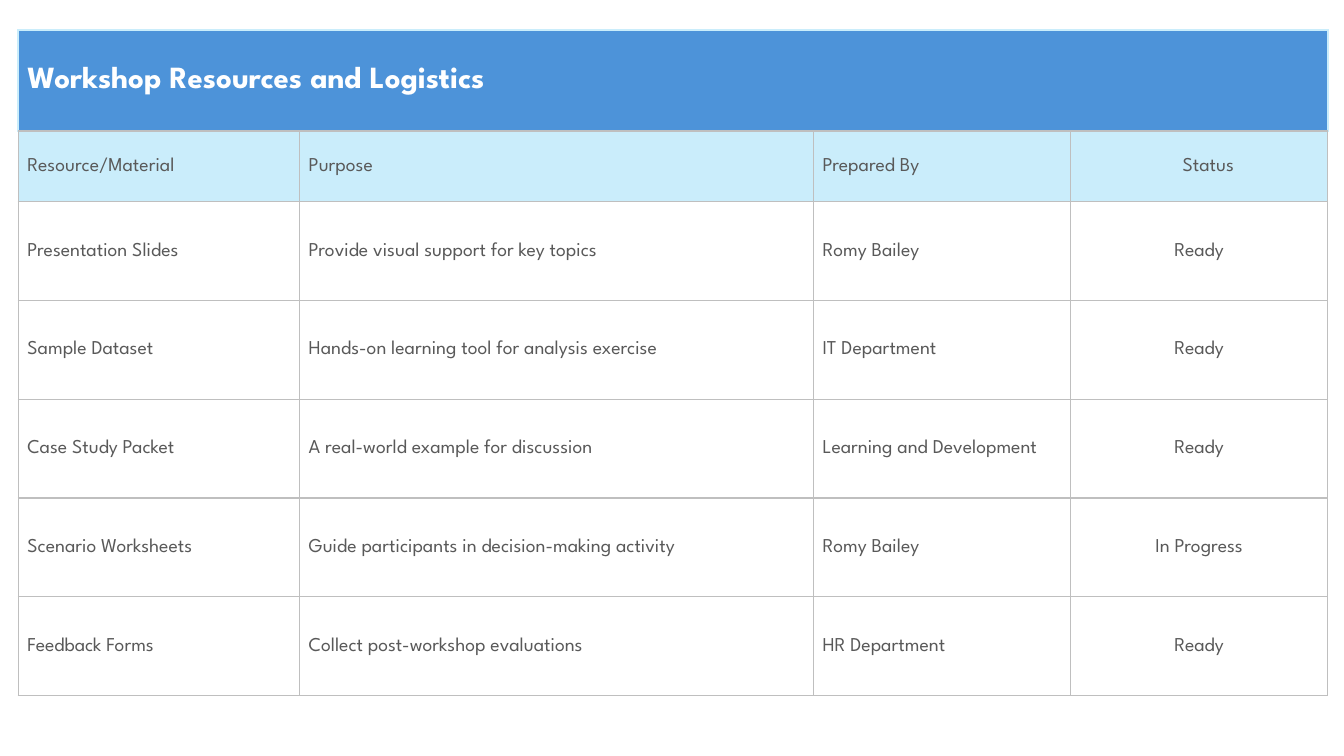
import lxml.etree
import pptx
import pptx.dml.color
import pptx.enum.text
import pptx.oxml.ns
import pptx.util

Cm = pptx.util.Cm
Pt = pptx.util.Pt
RGBColor = pptx.dml.color.RGBColor
Align = pptx.enum.text.PP_ALIGN

FONT = "League Spartan"
TITLE_BLUE = RGBColor(0x4D, 0x93, 0xD9)
PALE_BLUE = RGBColor(0xCA, 0xED, 0xFB)
GRID_GREY = RGBColor(0xBF, 0xBF, 0xBF)
TEXT_GREY = RGBColor(0x59, 0x59, 0x59)
WHITE = RGBColor(0xFF, 0xFF, 0xFF)

TITLE = "Workshop Resources and Logistics"
HEADINGS = ("Resource/Material", "Purpose", "Prepared By", "Status")
RESOURCES = (
    ("Presentation Slides", "Provide visual support for key topics", "Romy Bailey", "Ready"),
    ("Sample Dataset", "Hands-on learning tool for analysis exercise", "IT Department", "Ready"),
    ("Case Study Packet", "A real-world example for discussion", "Learning and Development", "Ready"),
    ("Scenario Worksheets", "Guide participants in decision-making activity", "Romy Bailey", "In Progress"),
    ("Feedback Forms", "Collect post-workshop evaluations", "HR Department", "Ready"),
)
COLUMN_WIDTHS = (Cm(7.09), Cm(12.95), Cm(6.48), Cm(6.48))
ROW_HEIGHTS = (Cm(2.54), Cm(1.78)) + (Cm(2.49),) * len(RESOURCES)
STATUS_COLUMN = len(HEADINGS) - 1


def add_border(cell, side, color, width):
    """Draw one cell edge (L, R, T or B); call before the cell is filled."""
    properties = cell._tc.get_or_add_tcPr()
    qn = pptx.oxml.ns.qn
    line = lxml.etree.SubElement(properties, qn(f"a:ln{side}"), w=str(width))
    fill = lxml.etree.SubElement(line, qn("a:solidFill"))
    lxml.etree.SubElement(fill, qn("a:srgbClr"), val=str(color))


def style_cell(cell, fill_color=None, outer_border=(GRID_GREY, Pt(1))):
    """Set edges and fill; outer_border applies to all sides but the bottom."""
    for side in "LRT":
        add_border(cell, side, *outer_border)
    add_border(cell, "B", GRID_GREY, Pt(1))
    if fill_color is None:
        cell.fill.background()
    else:
        cell.fill.solid()
        cell.fill.fore_color.rgb = fill_color


def write_cell(cell, text, color=TEXT_GREY, size=14, bold=False, alignment=Align.LEFT, left=0.23):
    cell.vertical_anchor = pptx.enum.text.MSO_ANCHOR.MIDDLE
    cell.margin_left = Cm(left)
    cell.margin_right = cell.margin_top = Cm(0.02)
    cell.margin_bottom = 0
    cell.text_frame.text = text
    paragraph = cell.text_frame.paragraphs[0]
    paragraph.alignment = alignment
    font = paragraph.runs[0].font
    font.name = FONT
    font.size = Pt(size)
    font.bold = bold
    font.color.rgb = color


def fill_title_row(table):
    title_cell = table.cell(0, 0)
    title_cell.merge(table.cell(0, STATUS_COLUMN))
    for column in range(len(HEADINGS)):
        style_cell(table.cell(0, column), TITLE_BLUE, (PALE_BLUE, Pt(1.5)))
    write_cell(title_cell, TITLE, WHITE, 22, True)


def fill_row(table, row, texts, status_inset, fill_color=None):
    for column, text in enumerate(texts):
        cell = table.cell(row, column)
        style_cell(cell, fill_color)
        if column == STATUS_COLUMN:
            write_cell(cell, text, alignment=Align.CENTER, left=status_inset)
        else:
            write_cell(cell, text)


def add_resource_table(slide):
    frame = slide.shapes.add_table(
        len(ROW_HEIGHTS), len(COLUMN_WIDTHS), Cm(0.46), Cm(0.76),
        sum(COLUMN_WIDTHS), sum(ROW_HEIGHTS))
    table = frame.table
    table.horz_banding = False
    for column, width in zip(table.columns, COLUMN_WIDTHS):
        column.width = width
    for row, height in zip(table.rows, ROW_HEIGHTS):
        row.height = height
    fill_title_row(table)
    fill_row(table, 1, HEADINGS, 0.48, PALE_BLUE)
    for row, resource in enumerate(RESOURCES, start=2):
        fill_row(table, row, resource, 0.02)


def main():
    presentation = pptx.Presentation()
    presentation.slide_width = Cm(33.87)
    presentation.slide_height = Cm(19.05)
    slide = presentation.slides.add_slide(presentation.slide_layouts[6])
    add_resource_table(slide)
    presentation.save("out.pptx")


if __name__ == "__main__":
    main()
